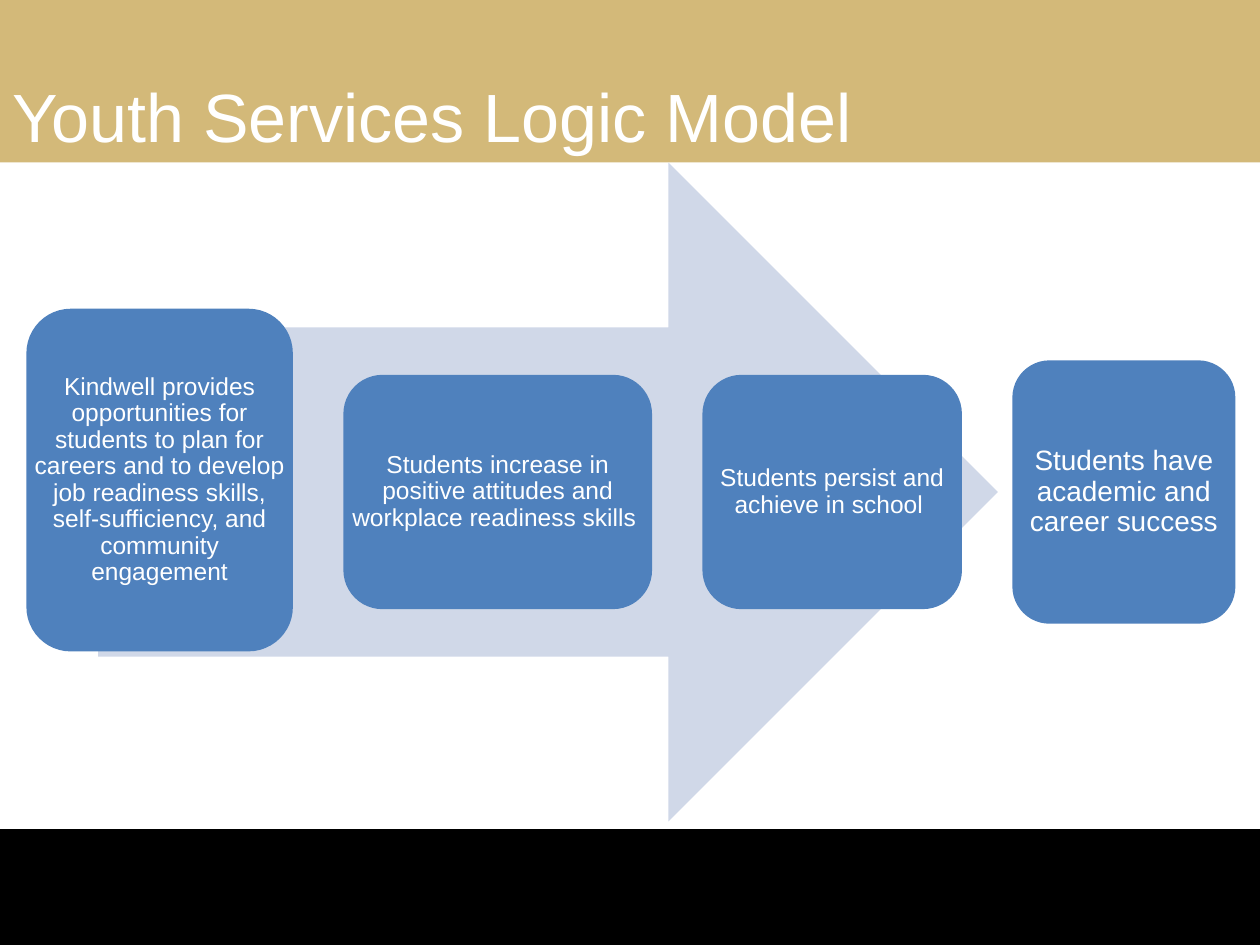
from dataclasses import dataclass

from pptx import Presentation
from pptx.dml.color import RGBColor
from pptx.enum import shapes, text
from pptx.util import Emu, Inches, Pt

COLUMNS, ROWS = 100, 75
CELL = Inches(10) // COLUMNS
FONT = "Arial"
GOLD, BLACK, WHITE = "D3B979", "000000", "FFFFFF"
BLUE, PALE_BLUE = "4F81BD", "D0D8E8"

FIRST_COLUMN = 2.1
GAP = 4
MIDDLE_ROW = 39.05


@dataclass(frozen=True)
class Area:
    column: float
    row: float
    columns: float
    rows: float

    def lengths(self) -> list[Emu]:
        cells = (self.column, self.row, self.columns, self.rows)
        return [Emu(round(count * CELL)) for count in cells]


@dataclass(frozen=True)
class Stage:
    wording: str
    columns: float
    rows: float
    size: int = 14
    inset: float = 0.06
    rise: float = 0


STAGES = (
    Stage(
        "Kindwell provides opportunities for students to plan for careers and "
        "to develop job readiness skills, self-sufficiency, and community engagement",
        21.15, 27.2, rise=0.95,
    ),
    Stage(
        "Students increase in positive attitudes and workplace readiness skills ",
        24.5, 18.6,
    ),
    Stage("Students persist and achieve in school ", 20.6, 18.6),
    Stage("Students have academic and career success", 17.7, 20.9, size=16, inset=0.07),
)


def colour(value: str) -> RGBColor:
    return RGBColor.from_string(value)


def add_filled(slide, kind, area: Area, fill: str):
    shape = slide.shapes.add_shape(kind, *area.lengths())
    shape.shadow.inherit = False
    shape.fill.solid()
    shape.fill.fore_color.rgb = colour(fill)
    shape.line.fill.background()
    return shape


def write(shape, wording: str, *, size: float, align, anchor,
          insets: tuple[float, float] = (0.1, 0.05), spacing: float = 1.0) -> None:
    frame = shape.text_frame
    frame.word_wrap = True
    frame.auto_size = text.MSO_AUTO_SIZE.NONE
    frame.vertical_anchor = anchor
    frame.margin_left = frame.margin_right = Inches(insets[0])
    frame.margin_top = frame.margin_bottom = Inches(insets[1])
    paragraph = frame.paragraphs[0]
    paragraph.alignment = align
    paragraph.line_spacing = spacing
    run = paragraph.add_run()
    run.text = wording
    run.font.name = FONT
    run.font.size = Pt(size)
    run.font.color.rgb = colour(WHITE)


def add_stage(slide, stage: Stage, column: float) -> None:
    row = MIDDLE_ROW - stage.rise - stage.rows / 2
    area = Area(column, row, stage.columns, stage.rows)
    add_filled(slide, shapes.MSO_SHAPE.ROUNDED_RECTANGLE, area, BLUE)
    label = slide.shapes.add_textbox(*area.lengths())
    write(label, stage.wording, size=stage.size, align=text.PP_ALIGN.CENTER,
          anchor=text.MSO_ANCHOR.MIDDLE, insets=(stage.inset, stage.inset), spacing=0.9)


def main() -> None:
    presentation = Presentation()
    presentation.slide_width = Emu(COLUMNS * CELL)
    presentation.slide_height = Emu(ROWS * CELL)
    slide = presentation.slides.add_slide(presentation.slide_layouts[6])

    rectangle = shapes.MSO_SHAPE.RECTANGLE
    add_filled(slide, rectangle, Area(0, 65.8, COLUMNS, 9.2), BLACK)
    title = add_filled(slide, rectangle, Area(0, -0.4, COLUMNS, 13.3), GOLD)
    write(title, "Youth Services Logic Model", size=39,
          align=text.PP_ALIGN.LEFT, anchor=text.MSO_ANCHOR.BOTTOM)

    arrow = Area(7.8, 12.9, 71.4, 52.3)
    add_filled(slide, shapes.MSO_SHAPE.RIGHT_ARROW, arrow, PALE_BLUE)

    column = FIRST_COLUMN
    for stage in STAGES:
        add_stage(slide, stage, column)
        column += stage.columns + GAP

    presentation.save("out.pptx")


if __name__ == "__main__":
    main()
